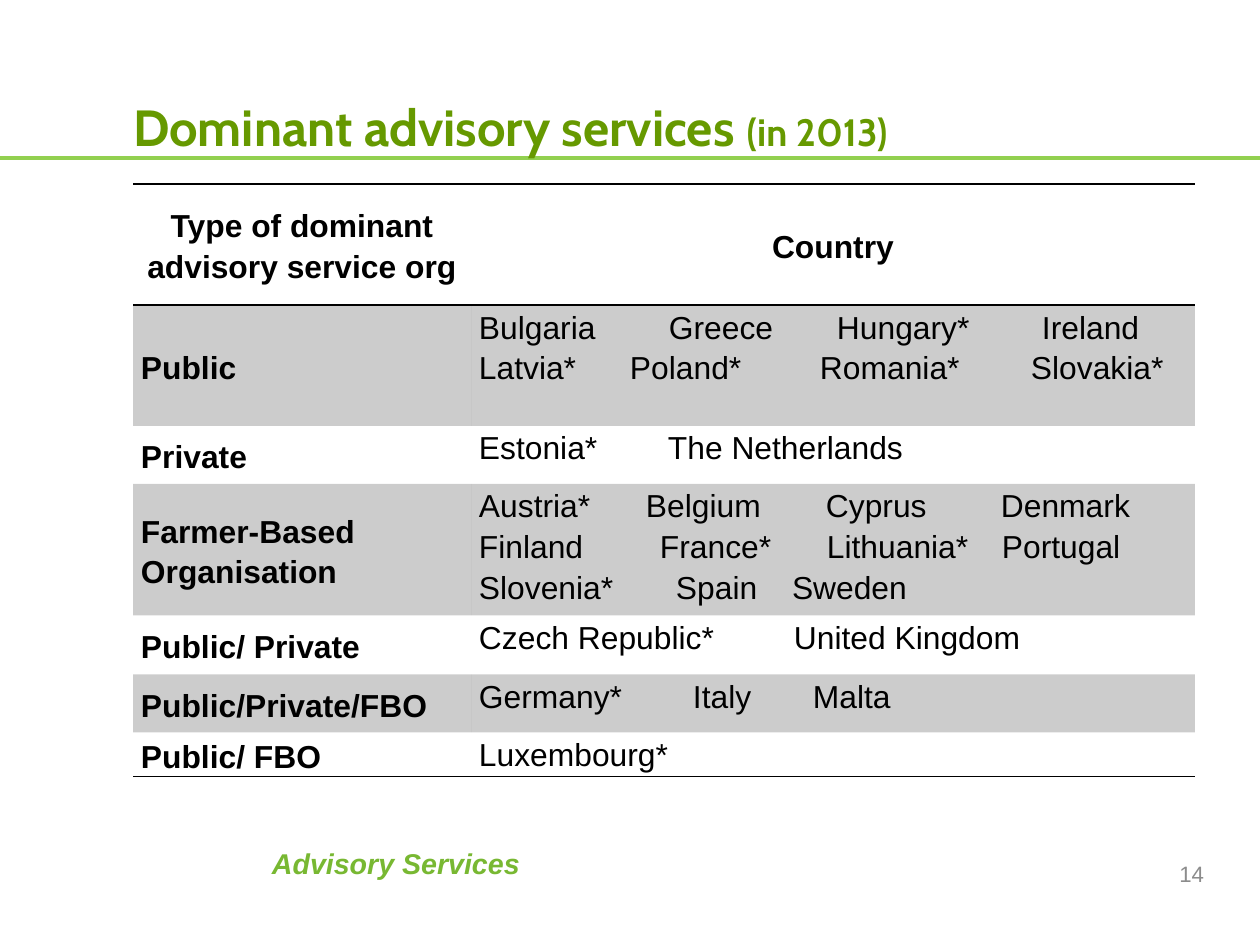
from lxml import etree
from pptx import Presentation
from pptx.dml.color import RGBColor
from pptx.enum.shapes import MSO_CONNECTOR
from pptx.enum.text import MSO_ANCHOR, PP_ALIGN
from pptx.oxml.ns import qn
from pptx.util import Emu, Pt

SLIDE_WIDTH, SLIDE_HEIGHT = 1260, 945
PLAIN_TABLE_STYLE = "{2D5ABB26-0587-4C30-8999-92F81FD0307C}"
BLACK = "000000"
COLUMN_WIDTHS = [338, 724]
ROW_HEIGHTS = [121, 121, 58, 124, 59, 58, 42]
HEADINGS = ["Type of dominant advisory service org", "Country"]
SERVICES = [
    ("Public", [
        ("Bulgaria\tGreece\tHungary*\tIreland", [190, 358, 563]),
        ("Latvia*\tPoland*\tRomania*\tSlovakia*", [151, 341, 552]),
    ]),
    ("Private", [("Estonia*\tThe Netherlands", [189])]),
    ("Farmer-Based Organisation", [
        ("Austria*\tBelgium\tCyprus\tDenmark", [167, 347, 522]),
        ("Finland\tFrance*\tLithuania*\tPortugal", [181, 348, 523]),
        ("Slovenia*\tSpain\tSweden", [197, 313]),
    ]),
    ("Public/ Private", [("Czech Republic*\tUnited Kingdom", [315])]),
    ("Public/Private/FBO", [("Germany*\tItaly\tMalta", [214, 334])]),
    ("Public/ FBO", [("Luxembourg*", [])]),
]


def px(length):
    return Emu(length * 8000)


def rgb(color):
    return RGBColor.from_string(color)


def write_text(paragraph, text, size=20, color=BLACK, font="Arial", bold=False,
               italic=False, align=PP_ALIGN.LEFT, spacing=1.15):
    paragraph.alignment = align
    paragraph.line_spacing = spacing
    run = paragraph.add_run()
    run.text = text
    run.font.name = font
    run.font.size = Pt(size)
    run.font.bold = bold
    run.font.italic = italic
    run.font.color.rgb = rgb(color)


def add_text_box(slide, box, inset=(11, 6), anchor=MSO_ANCHOR.MIDDLE, wrap=True):
    frame = slide.shapes.add_textbox(*map(px, box)).text_frame
    frame.word_wrap = wrap
    frame.vertical_anchor = anchor
    frame.margin_left = frame.margin_right = px(inset[0])
    frame.margin_top = frame.margin_bottom = px(inset[1])
    return frame.paragraphs[0]


def add_tab_stops(paragraph, positions):
    if not positions:
        return
    properties = paragraph._p.get_or_add_pPr()
    tab_list = etree.SubElement(properties, qn("a:tabLst"))
    for position in positions:
        etree.SubElement(tab_list, qn("a:tab"), pos=str(px(position)), algn="l")


def add_border(cell, side):
    properties = cell._tc.get_or_add_tcPr()
    border = etree.SubElement(properties, qn(f"a:{side}"), w=str(Pt(1)))
    fill = etree.SubElement(border, qn("a:solidFill"))
    etree.SubElement(fill, qn("a:srgbClr"), val=BLACK)


def shade_cell(cell, shaded):
    if not shaded:
        cell.fill.background()
        return
    cell.fill.solid()
    cell.fill.fore_color.rgb = rgb(BLACK)
    color = cell._tc.tcPr.find(qn("a:solidFill")).find(qn("a:srgbClr"))
    etree.SubElement(color, qn("a:alpha"), val="20000")


def add_heading(slide, box):
    left, top, width, height = box
    rule_top = top + 111
    rule = slide.shapes.add_connector(
        MSO_CONNECTOR.STRAIGHT, 0, px(rule_top), px(SLIDE_WIDTH), px(rule_top))
    rule.line.color.rgb = rgb("92D050")
    rule.line.width = Pt(3)
    etree.SubElement(rule._element.spPr, qn("a:effectLst"))
    paragraph = add_text_box(slide, box, inset=(0, 0))
    for text, size in [("Dominant advisory services ", 32), ("(in 2013)", 24)]:
        write_text(paragraph, text, size=size, color="669900", font="Cabin",
                   bold=True, spacing=1.01)


def add_services_table(slide, box):
    table = slide.shapes.add_table(
        len(ROW_HEIGHTS), len(COLUMN_WIDTHS), *map(px, box)).table
    table._tbl.tblPr.find(qn("a:tableStyleId")).text = PLAIN_TABLE_STYLE
    table.first_row = table.horz_banding = False
    for column, width in zip(table.columns, COLUMN_WIDTHS):
        column.width = px(width)
    for row, height in zip(table.rows, ROW_HEIGHTS):
        row.height = px(height)

    last_row = len(ROW_HEIGHTS) - 1
    for row_index, row in enumerate(table.rows):
        for column_index, cell in enumerate(row.cells):
            cell.margin_left = cell.margin_right = px(8)
            cell.margin_top = cell.margin_bottom = 0
            is_country_list = row_index > 0 and column_index == 1
            cell.vertical_anchor = MSO_ANCHOR.TOP if is_country_list else MSO_ANCHOR.MIDDLE
            if row_index == 0:
                add_border(cell, "lnT")
            if row_index in (0, last_row):
                add_border(cell, "lnB")
            shade_cell(cell, row_index in (1, 3, 5))

    for cell, heading in zip(table.rows[0].cells, HEADINGS):
        write_text(cell.text_frame.paragraphs[0], heading, bold=True,
                   align=PP_ALIGN.CENTER)
    for row_index, (service, country_lines) in enumerate(SERVICES, start=1):
        service_frame = table.cell(row_index, 0).text_frame
        write_text(service_frame.paragraphs[0], service, bold=True)
        frame = table.cell(row_index, 1).text_frame
        for line_index, (countries, positions) in enumerate(country_lines):
            paragraph = frame.add_paragraph() if line_index else frame.paragraphs[0]
            paragraph.line_spacing = 1.15
            add_tab_stops(paragraph, positions)
            write_text(paragraph, countries)


def add_footer(slide, box):
    left, top, width, height = box
    topic = add_text_box(slide, (left, top, 273, 43), anchor=MSO_ANCHOR.TOP, wrap=False)
    write_text(topic, "Advisory Services", size=18, color="78B832", bold=True,
               italic=True, spacing=0.93)
    number_width = 294
    number = add_text_box(
        slide, (left + width - number_width, top + 6, number_width, height - 6))
    write_text(number, "14", size=14, color="8C8C8C", align=PP_ALIGN.RIGHT, spacing=1.0)


def main():
    presentation = Presentation()
    presentation.slide_width = px(SLIDE_WIDTH)
    presentation.slide_height = px(SLIDE_HEIGHT)
    slide = presentation.slides.add_slide(presentation.slide_layouts[6])
    add_heading(slide, (133, 47, 994, 158))
    add_services_table(slide, (133, 184, sum(COLUMN_WIDTHS), sum(ROW_HEIGHTS)))
    add_footer(slide, (261, 843, 954, 56))
    presentation.save("out.pptx")


if __name__ == "__main__":
    main()
